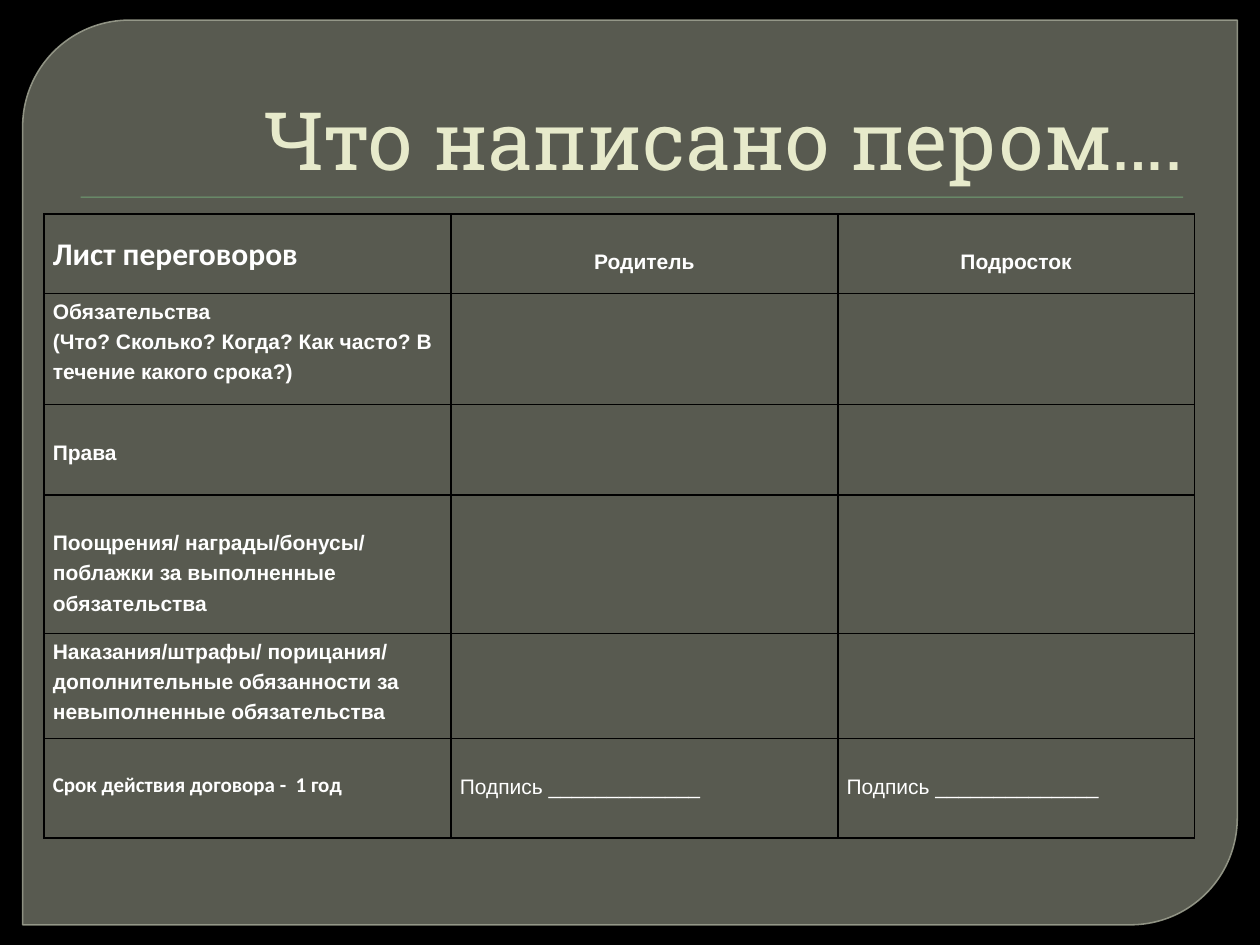
import dataclasses

import lxml.etree
import pptx
import pptx.dml.color
import pptx.enum.shapes
import pptx.enum.text
import pptx.oxml.ns
import pptx.util

Inches = pptx.util.Inches
Pt = pptx.util.Pt
RGBColor = pptx.dml.color.RGBColor
Align = pptx.enum.text.PP_ALIGN
Kind = pptx.enum.shapes.MSO_SHAPE
qn = pptx.oxml.ns.qn

BLACK = RGBColor(0x00, 0x00, 0x00)
WHITE = RGBColor(0xFF, 0xFF, 0xFF)
PANEL = RGBColor(0x88, 0x8B, 0x7B)
EDGE = RGBColor(0x9D, 0xA0, 0x90)
GREEN = RGBColor(0x72, 0xA3, 0x76)
CREAM = RGBColor(0xE7, 0xEA, 0xCB)

LINE = Pt(17.2)
COLS = (3.23, 3.07, 2.83)
ROWS = (0.63, 0.88, 0.72, 1.1, 0.83, 0.79)


@dataclasses.dataclass(frozen=True)
class Entry:
    row: int
    col: int
    lines: tuple[str, ...]
    drop: bool = True
    font: str = "Arial"
    size: int = 12
    bold: bool = True
    align: Align = Align.LEFT


ENTRIES = (
    Entry(0, 0, ("Лист переговоров",), font="Calibri", size=18),
    Entry(0, 1, ("Родитель",), align=Align.CENTER),
    Entry(0, 2, ("Подросток",), align=Align.CENTER),
    Entry(1, 0, ("Обязательства",
                 "(Что? Сколько? Когда? Как часто? В течение какого срока?)"),
          drop=False),
    Entry(2, 0, ("Права",)),
    Entry(3, 0, ("Поощрения/ награды/бонусы/",
                 "поблажки за выполненные обязательства")),
    Entry(4, 0, ("Наказания/штрафы/ порицания/ дополнительные обязанности "
                 "за невыполненные обязательства",), drop=False),
    Entry(5, 0, ("Срок действия договора -  1 год",), font="Calibri"),
    Entry(5, 1, ("Подпись _____________",), bold=False),
    Entry(5, 2, ("Подпись ______________",), bold=False),
)


def add_run(para, text: str, font: str, size: int, color: RGBColor, bold: bool) -> None:
    run = para.add_run()
    run.text = text
    run.font.name = font
    run.font.size = Pt(size)
    run.font.bold = bold
    run.font.color.rgb = color


def set_alpha(fill, share: int) -> None:
    color = fill._xPr.find(qn("a:solidFill"))[0]
    lxml.etree.SubElement(color, qn("a:alpha"), val=str(share * 1000))


def add_form(slide, kind: Kind, box: tuple[float, ...], color: RGBColor):
    shape = slide.shapes.add_shape(kind, *map(Inches, box))
    shape.shadow.inherit = False
    shape.fill.solid()
    shape.fill.fore_color.rgb = color
    shape.line.fill.background()
    return shape


def add_panel(slide) -> None:
    panel = add_form(slide, Kind.ROUND_2_DIAG_RECTANGLE,
                     (0.18, 0.16, 9.64, 7.18), PANEL)
    panel.adjustments[0] = 0.118
    panel.adjustments[1] = 0
    set_alpha(panel.fill, 65)
    panel.line.color.rgb = EDGE
    panel.line.width = Pt(0.87)
    set_alpha(panel.line.fill, 88)


def set_title(slide) -> None:
    title = slide.shapes.title
    slide.shapes._spTree.append(title._element)
    title.left, title.top = Inches(0.5), Inches(0.28)
    title.width, title.height = Inches(9), Inches(1.25)
    frame = title.text_frame
    frame.auto_size = pptx.enum.text.MSO_AUTO_SIZE.NONE
    frame.vertical_anchor = pptx.enum.text.MSO_ANCHOR.BOTTOM
    para = frame.paragraphs[0]
    para.alignment = Align.RIGHT
    add_run(para, "Что написано пером….", "Roboto Slab", 46, CREAM, False)


def style_cell(cell) -> None:
    props = cell._tc.get_or_add_tcPr()
    for side in ("L", "R", "T", "B"):
        line = lxml.etree.SubElement(props, qn(f"a:ln{side}"), w=str(Pt(1)))
        fill = lxml.etree.SubElement(line, qn("a:solidFill"))
        lxml.etree.SubElement(fill, qn("a:srgbClr"), val=str(BLACK))
    cell.fill.background()
    cell.margin_left = cell.margin_right = Inches(0.07)
    cell.margin_top = cell.margin_bottom = 0


def fill_cell(cell, entry: Entry) -> None:
    if entry.drop:
        cell.margin_top = LINE
    frame = cell.text_frame
    for index, text in enumerate(entry.lines):
        para = frame.add_paragraph() if index else frame.paragraphs[0]
        para.alignment = entry.align
        para.line_spacing = LINE
        add_run(para, text, entry.font, entry.size, WHITE, entry.bold)


def add_grid(slide) -> None:
    frame = slide.shapes.add_table(
        len(ROWS), len(COLS), Inches(0.35), Inches(1.7),
        Inches(sum(COLS)), Inches(sum(ROWS)))
    table = frame.table
    table.first_row = table.horz_banding = False
    for col, width in zip(table.columns, COLS):
        col.width = Inches(width)
    for row, height in zip(table.rows, ROWS):
        row.height = Inches(height)
    for cell in table.iter_cells():
        style_cell(cell)
    for entry in ENTRIES:
        fill_cell(table.cell(entry.row, entry.col), entry)


def main() -> None:
    deck = pptx.Presentation()
    deck.slide_width, deck.slide_height = Inches(10), Inches(7.5)
    slide = deck.slides.add_slide(deck.slide_layouts[5])
    back = slide.background.fill
    back.solid()
    back.fore_color.rgb = BLACK
    add_panel(slide)
    add_form(slide, Kind.RECTANGLE, (0.64, 1.56, 8.75, 0.01), GREEN)
    set_title(slide)
    add_grid(slide)
    deck.save("out.pptx")


if __name__ == "__main__":
    main()
